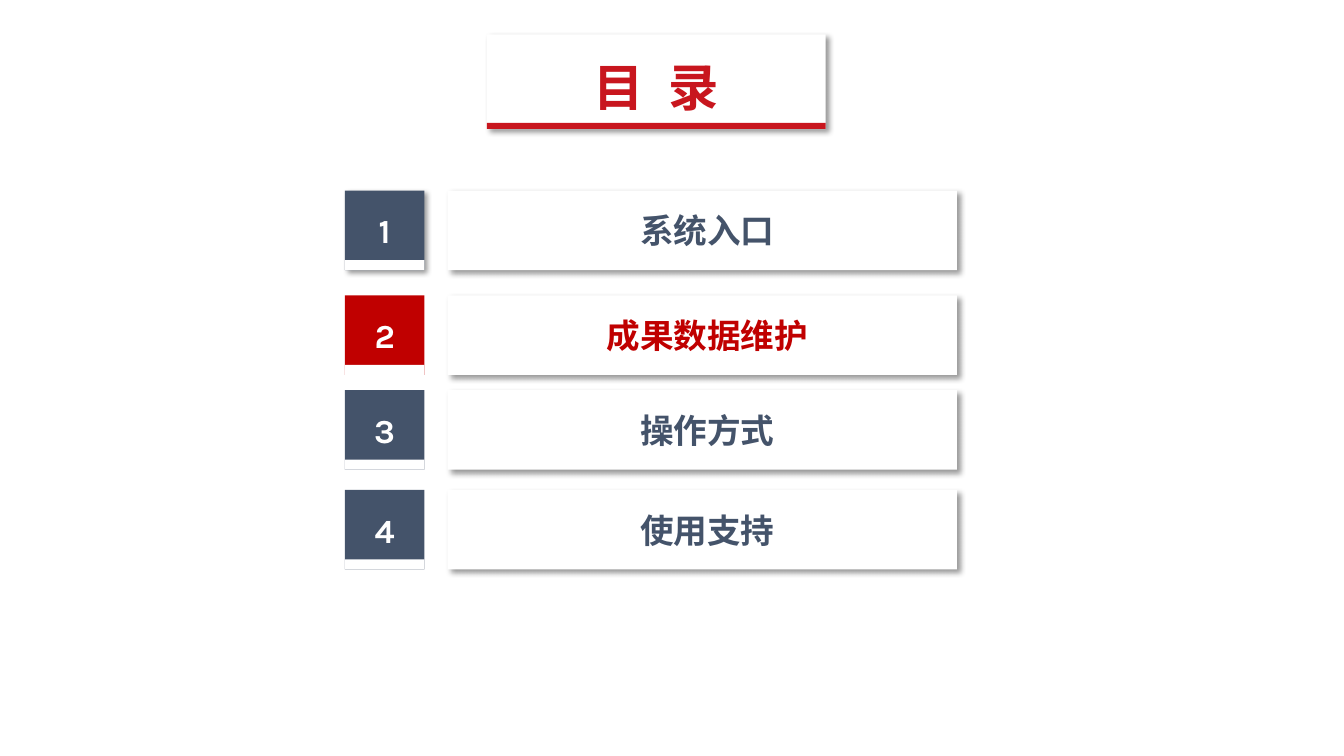
from dataclasses import dataclass

from lxml.etree import SubElement
from pptx import Presentation
from pptx.dml.color import RGBColor
from pptx.enum.shapes import MSO_SHAPE
from pptx.enum.text import MSO_ANCHOR as ANCHOR, MSO_AUTO_SIZE as AUTO_SIZE, PP_ALIGN as ALIGN
from pptx.oxml.ns import qn
from pptx.util import Inches, Pt


@dataclass(frozen=True)
class Theme:
    font: str = "Karla"
    title_size: int = 36
    item_size: int = 24
    white: str = "FFFFFF"
    navy: str = "44536A"
    red: str = "C00000"
    title_red: str = "C8161E"


THEME = Theme()

# Grid, in inches: a number column, a label column and one top per row
TILE_LEFT, TILE = 3.42, 0.79
LABEL_LEFT, LABEL_WIDTH = 4.44, 5.05
STRIP = 0.1
TITLE_LEFT, TITLE_TOP, TITLE_WIDTH, TITLE_HEIGHT = 4.83, 0.34, 3.36, 0.94
TITLE_RULE = 0.06

# Label, row top, accent colour
ITEMS = [
    ("系统入口", 1.89, THEME.navy),
    ("成果数据维护", 2.93, THEME.red),
    ("操作方式", 3.87, THEME.navy),
    ("使用支持", 4.86, THEME.navy),
]


def paint(s, color, shadow=False):
    """Give a shape a plain fill, no outline and, if asked, a soft shadow."""
    s.fill.solid()
    s.fill.fore_color.rgb = RGBColor.from_string(color)
    s.line.fill.background()
    s.shadow.inherit = False
    if shadow:
        effects = s._element.spPr.find(qn("a:effectLst"))
        outer = SubElement(effects, qn("a:outerShdw"), blurRad=str(Pt(4)), dist=str(Pt(3)),
                           dir="2700000", algn="tl", rotWithShape="0")
        black = SubElement(outer, qn("a:srgbClr"), val="000000")
        SubElement(black, qn("a:alpha"), val="40000")


def add_block(shapes, left, top, width, height, color, shadow=False):
    s = shapes.add_shape(MSO_SHAPE.RECTANGLE, *map(Inches, (left, top, width, height)))
    paint(s, color, shadow)
    return s


def write(s, text, size, color, anchor=ANCHOR.MIDDLE):
    """Set one bold centred line in a shape and return its run."""
    tf = s.text_frame
    tf.text = text
    tf.word_wrap = True
    tf.auto_size = AUTO_SIZE.NONE
    tf.vertical_anchor = anchor
    p = tf.paragraphs[0]
    p.alignment = ALIGN.CENTER
    r = p.runs[0]
    r.font.name = THEME.font
    r.font.size = Pt(size)
    r.font.bold = True
    r.font.color.rgb = RGBColor.from_string(color)
    SubElement(r.font._element, qn("a:ea"), typeface=THEME.font)
    return r


def add_title(slide, text):
    s = slide.shapes.title
    s.left, s.top = Inches(TITLE_LEFT), Inches(TITLE_TOP)
    s.width, s.height = Inches(TITLE_WIDTH), Inches(TITLE_HEIGHT)
    paint(s, THEME.white, shadow=True)
    r = write(s, text, THEME.title_size, THEME.title_red, ANCHOR.TOP)
    r.font._element.set("spc", "400")
    s.text_frame.margin_top = Inches(0.22)
    add_block(slide.shapes, TITLE_LEFT, TITLE_TOP + TITLE_HEIGHT - TITLE_RULE,
              TITLE_WIDTH, TITLE_RULE, THEME.title_red)


def add_number(slide, number, top, color):
    """Add a numbered tile with a white strip along its foot."""
    shapes = slide.shapes.add_group_shape().shapes
    tile = add_block(shapes, TILE_LEFT, top, TILE, TILE, color, shadow=number == 1)
    write(tile, str(number), THEME.item_size, THEME.white)
    add_block(shapes, TILE_LEFT, top + TILE - STRIP, TILE, STRIP, THEME.white)


def add_label(slide, text, top, color):
    s = add_block(slide.shapes, LABEL_LEFT, top, LABEL_WIDTH, TILE, THEME.white, shadow=True)
    write(s, text, THEME.item_size, color)
    s.text_frame.margin_left = Inches(0.2)


def main():
    prs = Presentation()
    prs.slide_width, prs.slide_height = Inches(13.33), Inches(7.5)
    slide = prs.slides.add_slide(prs.slide_layouts[5])
    add_title(slide, "目 录")
    for number, (text, top, color) in enumerate(ITEMS, start=1):
        add_number(slide, number, top, color)
        add_label(slide, text, top, color)
    prs.save("out.pptx")


if __name__ == "__main__":
    main()
